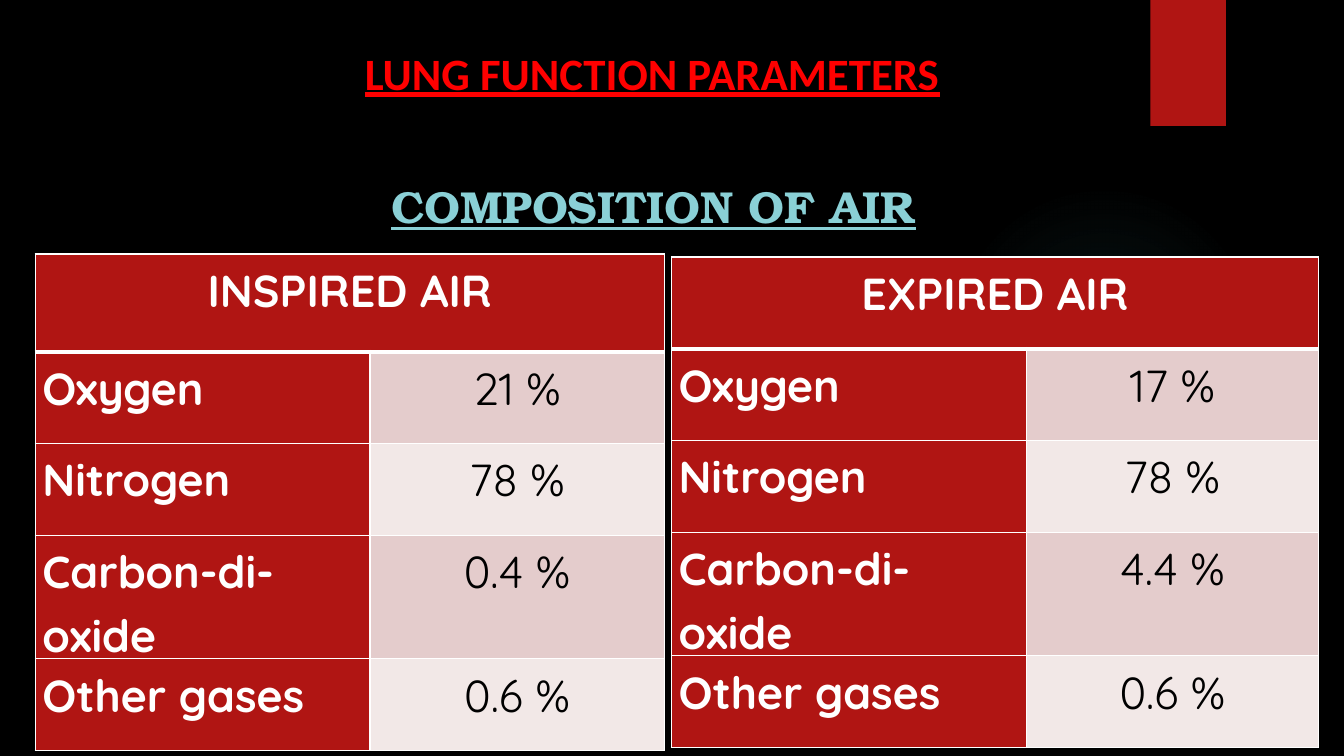
from dataclasses import dataclass

from lxml import etree
from pptx import Presentation
from pptx.dml.color import RGBColor
from pptx.enum.shapes import MSO_SHAPE
from pptx.enum.text import MSO_ANCHOR, PP_ALIGN
from pptx.oxml import parse_xml
from pptx.oxml.ns import qn
from pptx.util import Emu, Pt

ELLIPSE = MSO_SHAPE.OVAL
RECTANGLE = MSO_SHAPE.RECTANGLE
TOP = MSO_ANCHOR.TOP
BOTTOM = MSO_ANCHOR.BOTTOM
LEFT = PP_ALIGN.LEFT
CENTER = PP_ALIGN.CENTER
JUSTIFY = PP_ALIGN.JUSTIFY

EMU_PER_PX = 9144
DRAWING = "http://schemas.openxmlformats.org/drawingml/2006/main"


@dataclass(frozen=True)
class Theme:
    background: str = "000000"
    accent: str = "B01513"
    glow: str = "50B9C1"
    title: str = "FF0000"
    subtitle: str = "8AD0D6"
    light: str = "FFFFFF"
    dark: str = "000000"
    bands: tuple = ("E4CCCC", "F2E8E7")
    title_font: str = "Calibri"
    subtitle_font: str = "TeX Gyre Bonum"
    table_font: str = "Quicksand"
    size: int = 32
    thin_line: int = 1
    thick_line: int = 3


THEME = Theme()

GASES = ("Oxygen", "Nitrogen", "Carbon-di-oxide", "Other gases")
INSPIRED = ("21 %", "78 %", "0.4 %", "0.6 %")
EXPIRED = ("17 %", "78 %", "4.4 %", "0.6 %")


def px(length):
    return Emu(length * EMU_PER_PX)


def write_text(frame, text, *, font, color, bold=False, underline=False,
               align=LEFT, line_spacing=None, space_after=None):
    paragraph = frame.paragraphs[0]
    paragraph.alignment = align
    paragraph.line_spacing = line_spacing
    if space_after is not None:
        paragraph.space_after = Pt(space_after)
    run = paragraph.add_run()
    run.text = text
    run.font.name = font
    run.font.size = Pt(THEME.size)
    run.font.bold = bold
    run.font.underline = underline
    run.font.color.rgb = RGBColor.from_string(color)


def add_heading(slide, text, box, *, anchor, bottom_inset=5, **text_format):
    frame = slide.shapes.add_textbox(*map(px, box)).text_frame
    frame.word_wrap = True
    frame.vertical_anchor = anchor
    frame.margin_bottom = px(bottom_inset)
    write_text(frame, text, bold=True, underline=True, **text_format)


def add_plain_shape(slide, kind, box, color):
    shape = slide.shapes.add_shape(kind, *map(px, box))
    shape.shadow.inherit = False
    shape.fill.solid()
    shape.fill.fore_color.rgb = RGBColor.from_string(color)
    shape.line.fill.background()
    return shape


def add_glow(slide, box):
    shape = add_plain_shape(slide, ELLIPSE, box, THEME.glow)
    stops = "".join(
        f'<a:gs pos="{position * 1000}"><a:srgbClr val="{THEME.glow}">'
        f'<a:alpha val="{alpha * 1000}"/></a:srgbClr></a:gs>'
        for position, alpha in ((0, 7), (36, 6), (69, 0), (100, 0))
    )
    gradient = parse_xml(
        f'<a:gradFill xmlns:a="{DRAWING}"><a:gsLst>{stops}</a:gsLst>'
        '<a:path path="circle"><a:fillToRect l="50000" t="50000" r="50000" b="50000"/>'
        '</a:path></a:gradFill>'
    )
    properties = shape.element.spPr
    properties.replace(properties.find(qn("a:solidFill")), gradient)


def set_borders(cell, top, bottom):
    properties = cell._tc.get_or_add_tcPr()
    widths = {"lnL": THEME.thin_line, "lnR": THEME.thin_line, "lnT": top, "lnB": bottom}
    for side, width in widths.items():
        line = etree.SubElement(properties, qn(f"a:{side}"), w=str(Pt(width)))
        fill = etree.SubElement(line, qn("a:solidFill"))
        etree.SubElement(fill, qn("a:srgbClr"), val=THEME.light)


def format_cell(cell, row, fill):
    top = THEME.thick_line if row == 1 else THEME.thin_line
    bottom = THEME.thick_line if row == 0 else THEME.thin_line
    set_borders(cell, top, bottom)
    cell.fill.solid()
    cell.fill.fore_color.rgb = RGBColor.from_string(fill)
    cell.margin_left = cell.margin_right = px(7)
    cell.margin_top = cell.margin_bottom = 0


def write_cell(cell, text, **text_format):
    write_text(cell.text_frame, text, font=THEME.table_font,
               line_spacing=1.15, space_after=10, **text_format)


def add_air_table(slide, heading, values, *, left, top, widths, header_height, row_height=91):
    height = header_height + row_height * len(GASES)
    box = (left, top, sum(widths), height)
    table = slide.shapes.add_table(len(GASES) + 1, 2, *map(px, box)).table
    for column, width in zip(table.columns, widths):
        column.width = px(width)
    for index, row in enumerate(table.rows):
        row.height = px(row_height if index else header_height)
        value_fill = THEME.bands[(index - 1) % 2] if index else THEME.accent
        for cell, fill in zip(row.cells, (THEME.accent, value_fill)):
            format_cell(cell, index, fill)
    header = table.cell(0, 0)
    header.merge(table.cell(0, 1))
    write_cell(header, heading, color=THEME.light, bold=True, align=CENTER)
    for index, (gas, value) in enumerate(zip(GASES, values), start=1):
        write_cell(table.cell(index, 0), gas, color=THEME.light, bold=True, align=JUSTIFY)
        write_cell(table.cell(index, 1), value, color=THEME.dark, align=CENTER)


def main():
    presentation = Presentation()
    presentation.slide_width = px(1333)
    presentation.slide_height = px(750)
    slide = presentation.slides.add_slide(presentation.slide_layouts[6])
    slide.background.fill.solid()
    slide.background.fill.fore_color.rgb = RGBColor.from_string(THEME.background)

    add_glow(slide, (941, 183, 308, 308))
    add_plain_shape(slide, RECTANGLE, (1141, 0, 75, 125), THEME.accent)
    add_heading(slide, "LUNG FUNCTION PARAMETERS", (352, 40, 890, 145), anchor=TOP,
                font=THEME.title_font, color=THEME.title)
    add_heading(slide, "COMPOSITION OF AIR", (98, 161, 1101, 113), anchor=BOTTOM,
                bottom_inset=43, font=THEME.subtitle_font, color=THEME.subtitle, align=CENTER)
    add_air_table(slide, "INSPIRED AIR", INSPIRED, left=35, top=252,
                  widths=(332, 292), header_height=97)
    add_air_table(slide, "EXPIRED AIR", EXPIRED, left=666, top=255,
                  widths=(352, 290), header_height=91)

    presentation.save("out.pptx")


if __name__ == "__main__":
    main()
